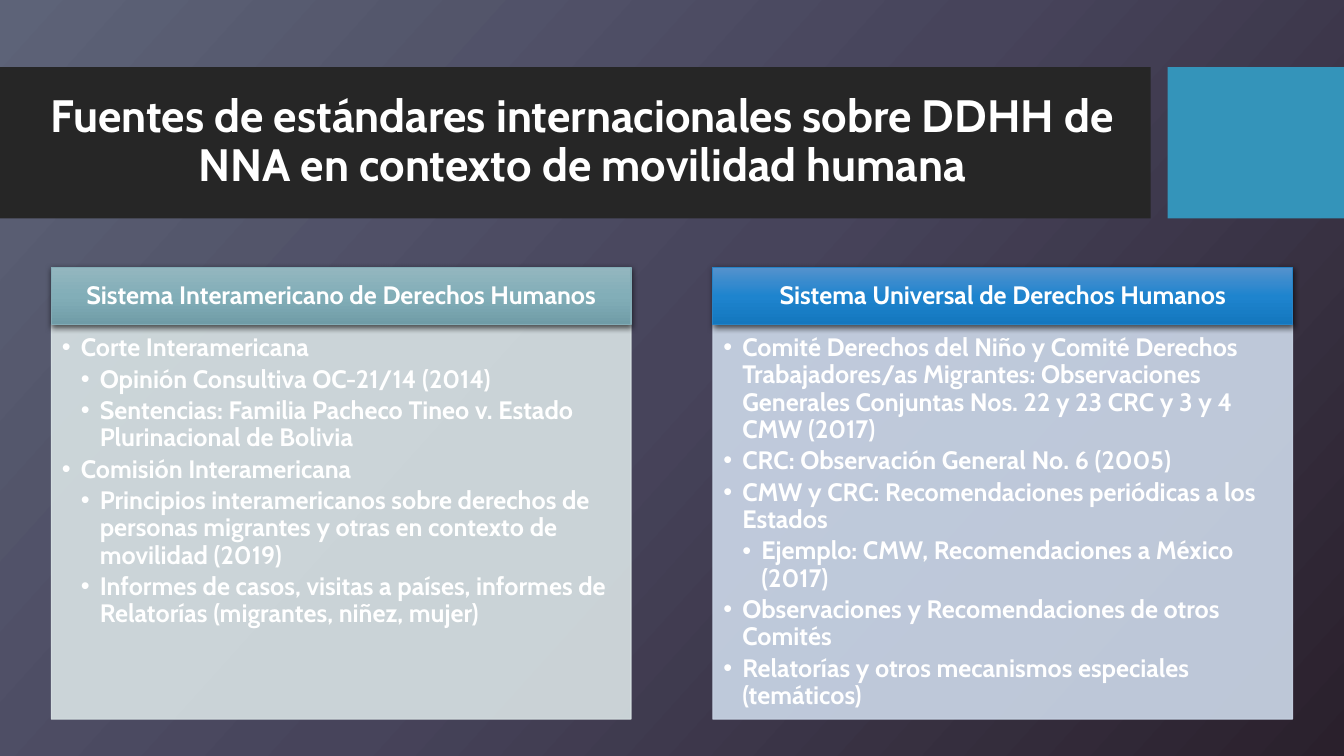
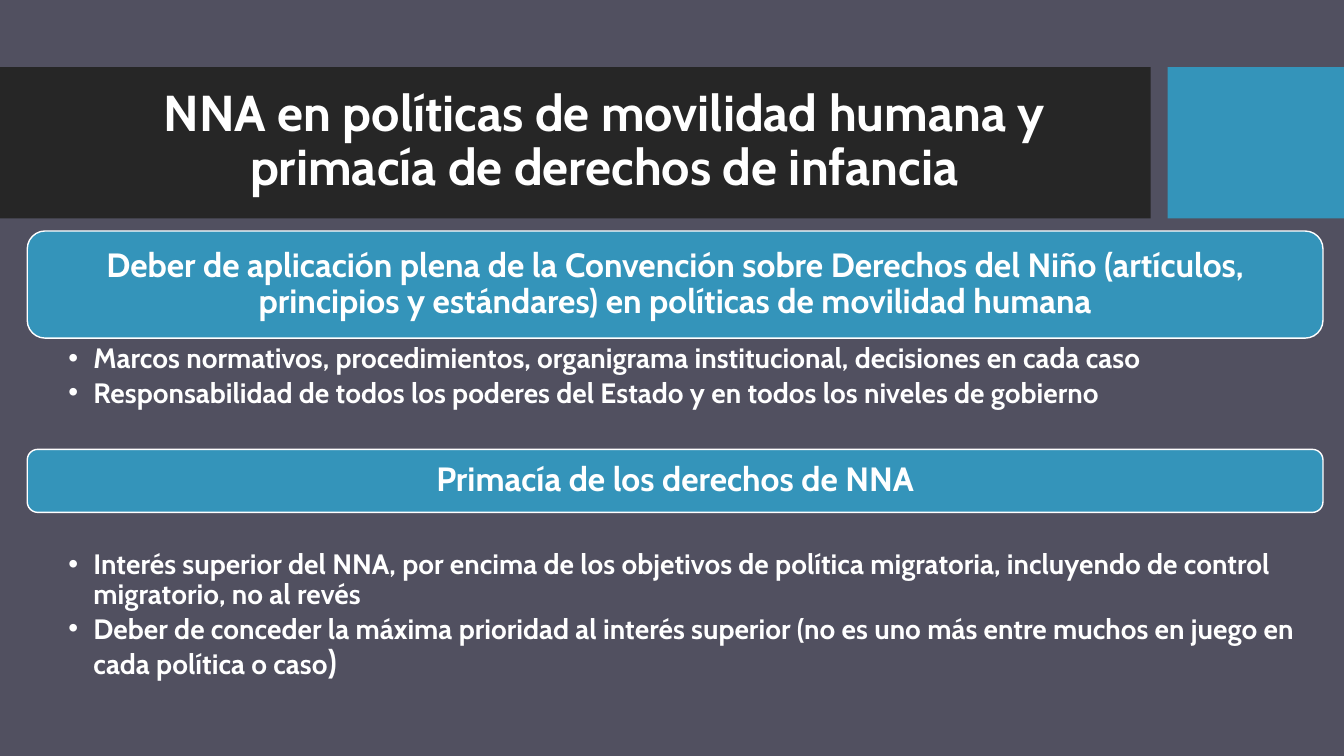
from dataclasses import dataclass

import lxml.etree
import pptx
import pptx.dml.color
import pptx.dml.fill
import pptx.enum.shapes
import pptx.enum.text
import pptx.oxml.ns
import pptx.presentation
import pptx.shapes.autoshape
import pptx.slide
import pptx.text.text
import pptx.util

RGBColor = pptx.dml.color.RGBColor
MSO_SHAPE = pptx.enum.shapes.MSO_SHAPE
PP_ALIGN = pptx.enum.text.PP_ALIGN
MSO_ANCHOR = pptx.enum.text.MSO_ANCHOR
qn = pptx.oxml.ns.qn

# Scale, font and palette
EMU_PER_PX = 9525
FONT = "Cabin"
WHITE = RGBColor(0xFF, 0xFF, 0xFF)
BAND_DARK = RGBColor(0x26, 0x26, 0x26)
ACCENT = RGBColor(0x34, 0x94, 0xBA)
PLAIN_BACKGROUND = RGBColor(0x51, 0x50, 0x60)
DUSK = (RGBColor(0x5D, 0x63, 0x78), RGBColor(0x47, 0x44, 0x5B), RGBColor(0x2A, 0x20, 0x2C))
TEAL = (RGBColor(0x93, 0xB6, 0xBF), RGBColor(0x82, 0xAE, 0xB8), RGBColor(0x70, 0x9C, 0xA7))
BLUE = (RGBColor(0x54, 0x92, 0xCD), RGBColor(0x1E, 0x84, 0xCE), RGBColor(0x14, 0x77, 0xBE))
TEAL_LINE = RGBColor(0x84, 0xAC, 0xB6)
BLUE_LINE = RGBColor(0x26, 0x83, 0xC6)
TEAL_PALE = RGBColor(0xD9, 0xE3, 0xE5)
BLUE_PALE = RGBColor(0xCD, 0xD9, 0xEA)


@dataclass(frozen=True)
class Box:
    left: int
    top: int
    width: int
    height: int

    def emu(self) -> list[int]:
        return [px(n) for n in (self.left, self.top, self.width, self.height)]


@dataclass(frozen=True)
class Bullet:
    text: str
    level: int = 0


@dataclass(frozen=True)
class ListStyle:
    size: int
    indent: int
    insets: tuple[int, int, int, int]


@dataclass(frozen=True)
class SourceCard:
    heading: str
    bullets: list[Bullet]
    gradient: tuple[RGBColor, ...]
    line: RGBColor
    pale: RGBColor


@dataclass(frozen=True)
class Principle:
    heading: str
    heading_box: Box
    bullets: list[Bullet]
    list_box: Box


CARD_LIST = ListStyle(18, 18, (10, 10, 14, 16))
PRINCIPLE_LIST = ListStyle(20, 24, (39, 3, 15, 3))

CARDS = [
    SourceCard("Sistema Interamericano de Derechos Humanos", [
        Bullet("Corte Interamericana"),
        Bullet("Opinión Consultiva OC-21/14 (2014)", 1),
        Bullet("Sentencias: Familia Pacheco Tineo v. Estado Plurinacional de Bolivia", 1),
        Bullet("Comisión Interamericana"),
        Bullet("Principios interamericanos sobre derechos de personas migrantes "
               "y otras en contexto de movilidad (2019)", 1),
        Bullet("Informes de casos, visitas a países, informes de Relatorías "
               "(migrantes, niñez, mujer)", 1),
    ], TEAL, TEAL_LINE, TEAL_PALE),
    SourceCard("Sistema Universal de Derechos Humanos", [
        Bullet("Comité Derechos del Niño y Comité Derechos Trabajadores/as Migrantes: "
               "Observaciones Generales Conjuntas Nos. 22 y 23 CRC y 3 y 4 CMW (2017)"),
        Bullet("CRC: Observación General No. 6 (2005)"),
        Bullet("CMW y CRC: Recomendaciones periódicas a los Estados"),
        Bullet("Ejemplo: CMW, Recomendaciones a México (2017)", 1),
        Bullet("Observaciones y Recomendaciones de otros Comités"),
        Bullet("Relatorías y otros mecanismos especiales (temáticos)"),
    ], BLUE, BLUE_LINE, BLUE_PALE),
]

PRINCIPLES = [
    Principle(
        "Deber de aplicación plena de la Convención sobre Derechos del Niño "
        "(artículos, principios y estándares) en políticas de movilidad humana",
        Box(26, 220, 1234, 102),
        [Bullet("Marcos normativos, procedimientos, organigrama institucional, "
                "decisiones en cada caso"),
         Bullet("Responsabilidad de todos los poderes del Estado y en todos los "
                "niveles de gobierno")],
        Box(26, 325, 1234, 68)),
    Principle(
        "Primacía de los derechos de NNA",
        Box(26, 428, 1234, 60),
        [Bullet("Interés superior del NNA, por encima de los objetivos de política "
                "migratoria, incluyendo de control migratorio, no al revés"),
         Bullet("Deber de conceder la máxima prioridad al interés superior (no es uno "
                "más entre muchos en juego en cada política o caso")],
        Box(26, 521, 1234, 181)),
]


def px(length: int) -> int:
    return length * EMU_PER_PX


# Formatting helpers
def style_run(run: pptx.text.text._Run, size: float) -> None:
    run.font.name = FONT
    run.font.size = pptx.util.Pt(size)
    run.font.bold = True
    run.font.color.rgb = WHITE


def style_paragraph(paragraph: pptx.text.text._Paragraph, size: float,
                    align: PP_ALIGN, after: int = 0) -> None:
    paragraph.alignment = align
    paragraph.line_spacing = 0.9
    paragraph.space_before = pptx.util.Pt(0)
    paragraph.space_after = pptx.util.Pt(after)
    for run in paragraph.runs:
        style_run(run, size)


def set_insets(frame: pptx.text.text.TextFrame, insets: tuple[int, int, int, int]) -> None:
    (frame.margin_left, frame.margin_top,
     frame.margin_right, frame.margin_bottom) = [px(n) for n in insets]


def set_gradient(fill: pptx.dml.fill.FillFormat, owner: lxml.etree._Element,
                 colors: tuple[RGBColor, ...], clockwise: int) -> None:
    fill.gradient()
    fill.gradient_angle = 360 - clockwise
    stops = owner.find(".//" + qn("a:gsLst"))
    for old_stop in list(stops):
        stops.remove(old_stop)
    for index, color in enumerate(colors):
        position = 100000 * index // (len(colors) - 1)
        stop = lxml.etree.SubElement(stops, qn("a:gs"), pos=str(position))
        lxml.etree.SubElement(stop, qn("a:srgbClr"), val=str(color))


def set_opacity(owner: lxml.etree._Element, percent: int) -> None:
    for color in owner.iter(qn("a:srgbClr")):
        lxml.etree.SubElement(color, qn("a:alpha"), val=str(percent * 1000))


def add_soft_shadow(shape: pptx.shapes.autoshape.Shape) -> None:
    effects = shape.element.spPr.find(qn("a:effectLst"))
    shadow = lxml.etree.SubElement(
        effects, qn("a:outerShdw"), blurRad="57150", dist="19050",
        dir="5400000", algn="ctr", rotWithShape="0")
    color = lxml.etree.SubElement(shadow, qn("a:srgbClr"), val="000000")
    lxml.etree.SubElement(color, qn("a:alpha"), val="63000")


# Drawing helpers
def add_panel(slide: pptx.slide.Slide, kind: MSO_SHAPE, box: Box,
              color: RGBColor) -> pptx.shapes.autoshape.Shape:
    panel = slide.shapes.add_shape(kind, *box.emu())
    panel.shadow.inherit = False
    panel.fill.solid()
    panel.fill.fore_color.rgb = color
    panel.line.fill.background()
    return panel


def set_outline(shape: pptx.shapes.autoshape.Shape, color: RGBColor, width: float) -> None:
    shape.line.color.rgb = color
    shape.line.width = pptx.util.Pt(width)


def write_heading(shape: pptx.shapes.autoshape.Shape, text: str, size: float,
                  insets: tuple[int, int, int, int]) -> None:
    frame = shape.text_frame
    frame.text = text
    frame.word_wrap = True
    frame.auto_size = pptx.enum.text.MSO_AUTO_SIZE.NONE
    frame.vertical_anchor = MSO_ANCHOR.MIDDLE
    set_insets(frame, insets)
    style_paragraph(frame.paragraphs[0], size, PP_ALIGN.CENTER)


def move_to(shape: pptx.shapes.autoshape.Shape, box: Box) -> None:
    shape.left, shape.top, shape.width, shape.height = box.emu()


def write_list(body: pptx.shapes.autoshape.Shape, box: Box,
               bullets: list[Bullet], style: ListStyle) -> None:
    move_to(body, box)
    frame = body.text_frame
    frame.text = "\n".join(bullet.text for bullet in bullets)
    frame.word_wrap = True
    frame.auto_size = pptx.enum.text.MSO_AUTO_SIZE.NONE
    frame.vertical_anchor = MSO_ANCHOR.TOP
    set_insets(frame, style.insets)
    for paragraph, bullet in zip(frame.paragraphs, bullets):
        paragraph.level = bullet.level
        properties = paragraph._p.get_or_add_pPr()
        properties.set("marL", str(px(style.indent * (bullet.level + 1))))
        properties.set("indent", str(-px(style.indent)))
        lxml.etree.SubElement(properties, qn("a:buChar"), char="•")
        style_paragraph(paragraph, style.size, PP_ALIGN.LEFT, after=3)


def add_titled_slide(deck: pptx.presentation.Presentation, title: str,
                     box: Box, size: float) -> pptx.slide.Slide:
    slide = deck.slides.add_slide(deck.slide_layouts.get_by_name("Two Content"))
    move_to(slide.shapes.title, box)
    write_heading(slide.shapes.title, title, size, (10, 5, 10, 5))
    return slide


def put_bands_on_master(deck: pptx.presentation.Presentation,
                        slide: pptx.slide.Slide) -> None:
    master_tree = deck.slide_master.shapes.element
    for box, color in ((Box(0, 64, 1096, 144), BAND_DARK),
                       (Box(1112, 64, 168, 144), ACCENT)):
        band = add_panel(slide, MSO_SHAPE.RECTANGLE, box, color)
        master_tree.insert(2, band.element)


# Slides
def build_sources(deck: pptx.presentation.Presentation) -> None:
    slide = add_titled_slide(
        deck, "Fuentes de estándares internacionales sobre DDHH de NNA en contexto "
        "de movilidad humana", Box(28, 79, 1053, 113), 32.4)
    set_gradient(slide.background.fill, slide.element, DUSK, 42)
    put_bands_on_master(deck, slide)
    for index, card in enumerate(CARDS):
        left = 49 + 630 * index
        body = slide.placeholders[index + 1]
        write_list(body, Box(left, 309, 552, 376), card.bullets, CARD_LIST)
        body.fill.solid()
        body.fill.fore_color.rgb = card.pale
        set_outline(body, card.pale, 0.75)
        set_opacity(body.element.spPr, 90)

        header = add_panel(slide, MSO_SHAPE.RECTANGLE, Box(left, 255, 552, 54), card.line)
        set_gradient(header.fill, header.element, card.gradient, 90)
        set_outline(header, card.line, 0.75)
        add_soft_shadow(header)
        write_heading(header, card.heading, CARD_LIST.size, (14, 8, 14, 8))


def build_principles(deck: pptx.presentation.Presentation) -> None:
    slide = add_titled_slide(
        deck, "NNA en políticas de movilidad humana y primacía de derechos de infancia",
        Box(71, 79, 1009, 113), 36)
    slide.background.fill.solid()
    slide.background.fill.fore_color.rgb = PLAIN_BACKGROUND
    for index, principle in enumerate(PRINCIPLES):
        pill = add_panel(slide, MSO_SHAPE.ROUNDED_RECTANGLE, principle.heading_box, ACCENT)
        set_outline(pill, WHITE, 1)
        write_heading(pill, principle.heading, 24, (14, 10, 14, 10))
        write_list(slide.placeholders[index + 1], principle.list_box,
                   principle.bullets, PRINCIPLE_LIST)
    # The closing bracket of the last bullet is larger
    closing = slide.placeholders[len(PRINCIPLES)].text_frame.paragraphs[-1].add_run()
    closing.text = ")"
    style_run(closing, 24)


def main() -> None:
    deck = pptx.Presentation()
    deck.slide_width, deck.slide_height = px(1280), px(720)
    build_sources(deck)
    build_principles(deck)
    deck.save("out.pptx")


if __name__ == "__main__":
    main()
